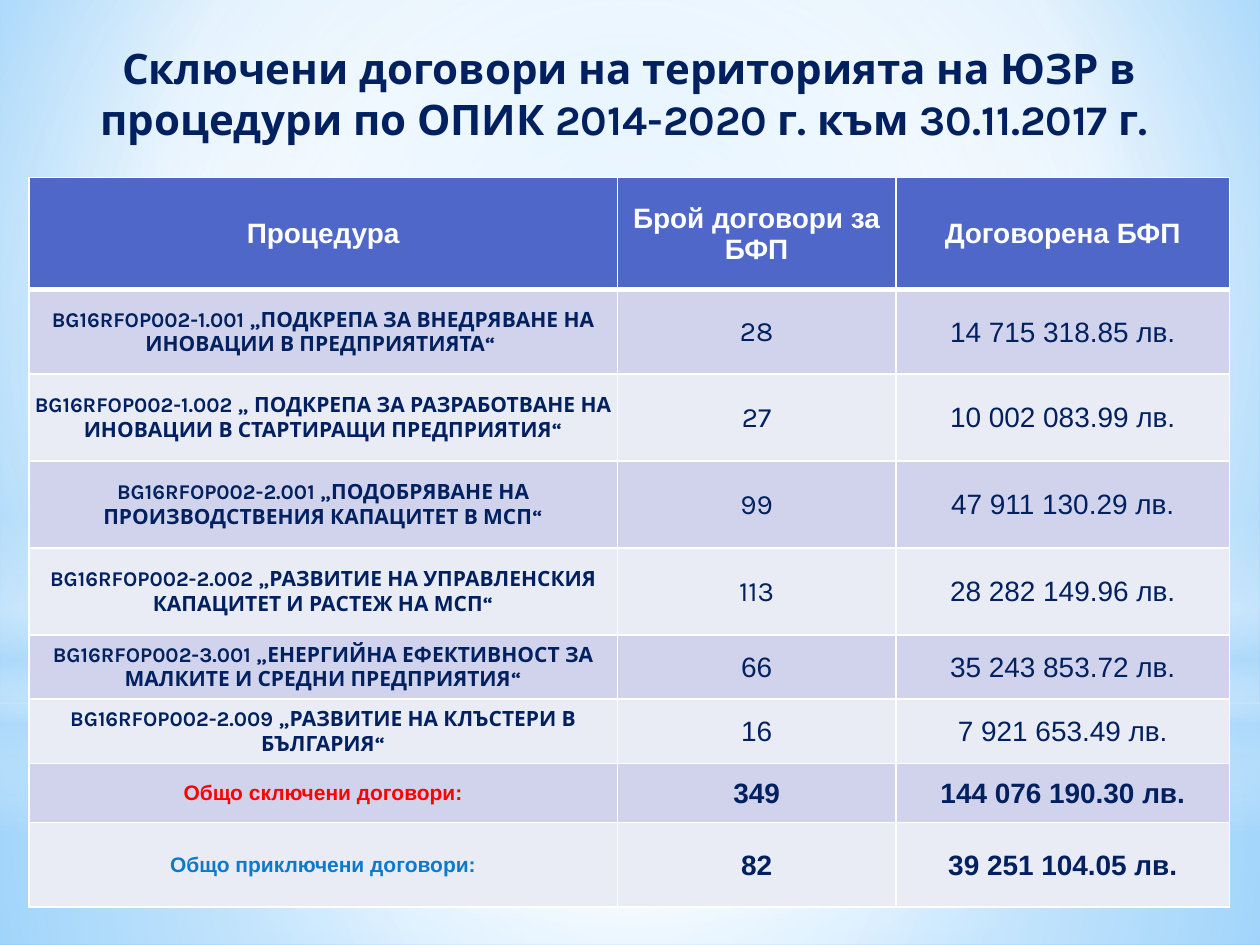
from lxml import etree
from pptx import Presentation
from pptx.dml.color import RGBColor
from pptx.enum.shapes import MSO_SHAPE
from pptx.enum.text import MSO_ANCHOR, PP_ALIGN
from pptx.oxml.ns import qn
from pptx.util import Inches, Pt

RECTANGLE, OVAL = MSO_SHAPE.RECTANGLE, MSO_SHAPE.OVAL
CENTER, MIDDLE, TOP = PP_ALIGN.CENTER, MSO_ANCHOR.MIDDLE, MSO_ANCHOR.TOP

COLORS = {
    "white": "FFFFFF", "mist": "B4DCFA", "sky": "9ED5FF", "azure": "5BB9FF",
    "navy": "002060", "header": "4E67C8", "odd": "D0D3EB", "even": "E9EBF5",
    "red": "FF0000", "blue": "0D79CA",
}
WIDTH, HEIGHT = 10, 7.5
MIDPOINT = (50, 50, 50, 50)


def set_gradient(fill, owner, stops, focus=None):
    """Stops are (position, colour, opacity) in percent; without a focus the fill runs downwards."""
    fill.gradient()
    gradient = next(owner.iter(qn("a:gradFill")))
    gradient.clear()
    gradient.set("rotWithShape", "1")
    stop_list = etree.SubElement(gradient, qn("a:gsLst"))
    for position, color, opacity in stops:
        stop = etree.SubElement(stop_list, qn("a:gs"), pos=str(position * 1000))
        tone = etree.SubElement(stop, qn("a:srgbClr"), val=COLORS[color])
        if opacity < 100:
            etree.SubElement(tone, qn("a:alpha"), val=str(opacity * 1000))
    if focus:
        circle = etree.SubElement(gradient, qn("a:path"), path="circle")
        sides = {side: str(share * 1000) for side, share in zip("ltrb", focus)}
        etree.SubElement(circle, qn("a:fillToRect"), **sides)
    else:
        etree.SubElement(gradient, qn("a:lin"), ang="5400000", scaled="0")


def add_text(frame, text, size, font, color, bold):
    para = frame.paragraphs[0]
    para.alignment = CENTER
    span = para.add_run()
    span.text = text
    span.font.size = Pt(size)
    span.font.name = font
    span.font.bold = bold
    span.font.color.rgb = RGBColor.from_string(COLORS[color])


deck = Presentation()
deck.slide_width, deck.slide_height = Inches(WIDTH), Inches(HEIGHT)
page = deck.slides.add_slide(deck.slide_layouts[6])

# Background glow
set_gradient(page.background.fill, page.element,
             [(0, "sky", 100), (60, "white", 100), (100, "azure", 100)], (20, 10, 20, 60))
horizon = 5.58
glows = [
    (RECTANGLE, horizon, HEIGHT - horizon, MIDPOINT,
     [(0, "white", 91), (37, "white", 76), (100, "mist", 79)]),
    (RECTANGLE, 0, horizon, MIDPOINT,
     [(0, "white", 89), (48, "white", 62), (100, "mist", 79)]),
    (RECTANGLE, 4.12, HEIGHT / 3, None,
     [(0, "white", 0), (29, "white", 30), (45, "mist", 40),
      (55, "white", 26), (65, "mist", 60), (100, "white", 0)]),
    (OVAL, 1.75, horizon, MIDPOINT, [(0, "white", 100), (56, "white", 0)]),
]
for outline, top, height, focus, stops in glows:
    glow = page.shapes.add_shape(outline, 0, Inches(top), Inches(WIDTH), Inches(height))
    glow.shadow.inherit = False
    glow.line.fill.background()
    set_gradient(glow.fill, glow.element, stops, focus)

# Title
title = page.shapes.add_textbox(Inches(0.35), Inches(0.29), Inches(9.29), Inches(1.34))
title.text_frame.word_wrap = True
title.text_frame.vertical_anchor = TOP
add_text(title.text_frame,
         "Сключени договори на територията на ЮЗР в процедури по ОПИК 2014-2020 г. към 30.11.2017 г. ",
         24, "Karla", "navy", True)

# Contracts table
column_widths = [4.67, 2.21, 2.65]
row_heights = [0.89, 0.67, 0.69, 0.69, 0.69, 0.51, 0.51, 0.47, 0.67]
rows = [
    ("Процедура", "Брой договори за БФП", "Договорена БФП"),
    ("BG16RFOP002-1.001 „ПОДКРЕПА ЗА ВНЕДРЯВАНЕ НА ИНОВАЦИИ В ПРЕДПРИЯТИЯТА“ ",
     "28", "14 715 318.85 лв."),
    ("BG16RFOP002-1.002 „ ПОДКРЕПА ЗА РАЗРАБОТВАНЕ НА ИНОВАЦИИ В СТАРТИРАЩИ ПРЕДПРИЯТИЯ“",
     "27", "10 002 083.99 лв."),
    ("BG16RFOP002-2.001 „ПОДОБРЯВАНЕ НА ПРОИЗВОДСТВЕНИЯ КАПАЦИТЕТ В МСП“",
     "99", "47 911 130.29 лв."),
    ("BG16RFOP002-2.002 „РАЗВИТИЕ НА УПРАВЛЕНСКИЯ КАПАЦИТЕТ И РАСТЕЖ НА МСП“",
     "113", "28 282 149.96 лв."),
    ("BG16RFOP002-3.001 „ЕНЕРГИЙНА ЕФЕКТИВНОСТ ЗА МАЛКИТЕ И СРЕДНИ ПРЕДПРИЯТИЯ“",
     "66", "35 243 853.72 лв."),
    ("BG16RFOP002-2.009 „РАЗВИТИЕ НА КЛЪСТЕРИ В БЪЛГАРИЯ“", "16", "7 921 653.49 лв."),
    ("Общо сключени договори:", "349", "144 076 190.30 лв."),
    ("Общо приключени договори:", "82", "39 251 104.05 лв."),
]
total_colors = {7: "red", 8: "blue"}
karla_counts = range(1, 5)

table = page.shapes.add_table(len(rows), len(column_widths), Inches(0.23), Inches(1.41),
                              Inches(sum(column_widths)), Inches(sum(row_heights))).table
for column, width in zip(table.columns, column_widths):
    column.width = Inches(width)
for row, height in zip(table.rows, row_heights):
    row.height = Inches(height)

for r, texts in enumerate(rows):
    header, total = r == 0, r in total_colors
    for c, text in enumerate(texts):
        cell = table.cell(r, c)
        cell.vertical_anchor = MIDDLE
        cell.margin_left = cell.margin_right = cell.margin_top = Inches(0.01)
        cell.margin_bottom = 0
        cell.fill.solid()
        band = "header" if header else "odd" if r % 2 else "even"
        cell.fill.fore_color.rgb = RGBColor.from_string(COLORS[band])

        procedure = c == 0 and not header
        karla = (procedure and not total) or (c == 1 and r in karla_counts)
        color = "white" if header else total_colors.get(r, "navy") if procedure else "navy"
        add_text(cell.text_frame, text, 12 if procedure else 16,
                 "Karla" if karla else "Arial", color, header or total or procedure)

        properties = cell._tc.get_or_add_tcPr()
        for index, side in enumerate("LRTB"):
            thick = (header and side == "B") or (r == 1 and side == "T")
            border = etree.Element(qn(f"a:ln{side}"), w=str(Pt(3 if thick else 1)))
            paint = etree.SubElement(border, qn("a:solidFill"))
            etree.SubElement(paint, qn("a:srgbClr"), val=COLORS["white"])
            properties.insert(index, border)

deck.save("out.pptx")
